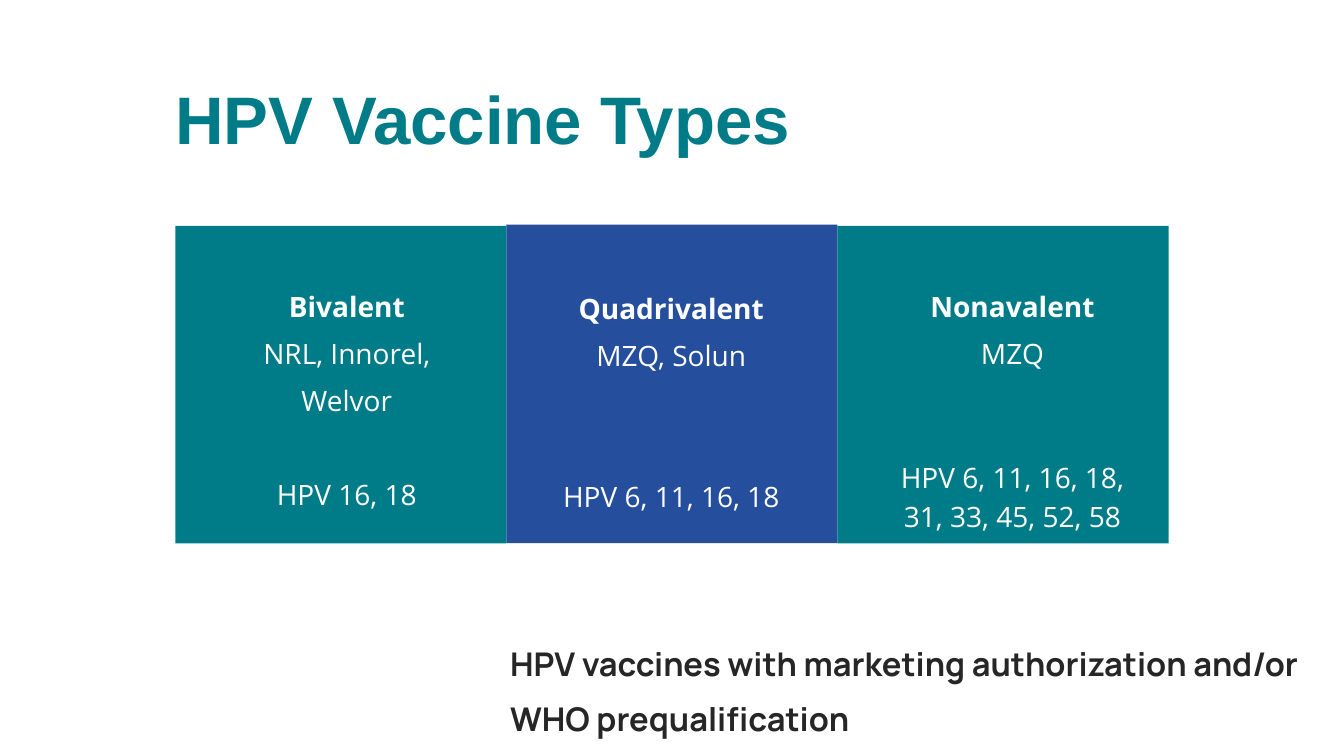
from pptx import Presentation
from pptx.dml.color import RGBColor
from pptx.enum.shapes import MSO_SHAPE
from pptx.enum.text import MSO_ANCHOR, PP_ALIGN
from pptx.util import Inches, Pt

TEAL, BLUE, WHITE, INK = "007C88", "254E9D", "FFFFFF", "262626"
LINE = 33.6


def color(hex_code):
    """Turn a hex string into a colour."""
    return RGBColor.from_string(hex_code)


def write(frame, text, font="Open Sans", size=20, fill=WHITE, bold=False,
          align=PP_ALIGN.CENTER, line=LINE, before=0):
    """Add one formatted paragraph to a text frame."""
    first = not frame.text
    paragraph = frame.paragraphs[0] if first else frame.add_paragraph()
    paragraph.alignment = align
    paragraph.line_spacing = Pt(line)
    if before:
        paragraph.space_before = Pt(before)
    run = paragraph.add_run()
    run.text = text
    run.font.name = font
    run.font.size = Pt(size)
    run.font.bold = bold
    run.font.color.rgb = color(fill)


def text_area(slide, left, top, width, height):
    """Add a wrapping text box without margins and return its frame."""
    frame = slide.shapes.add_textbox(
        Inches(left), Inches(top), Inches(width), Inches(height)).text_frame
    frame.word_wrap = True
    frame.vertical_anchor = MSO_ANCHOR.TOP
    frame.margin_left = frame.margin_right = 0
    frame.margin_top = frame.margin_bottom = 0
    return frame


def heading(slide, left, top, width, height):
    """Place the slide title."""
    write(text_area(slide, left, top, width, height), "HPV Vaccine Types",
          font="Arial", size=48, fill=TEAL, bold=True,
          align=PP_ALIGN.LEFT, line=80.64)


def vaccine_panel(slide, left, top, width, height, fill, inset, text_top, text_width,
                  valency, makers, strains, gap, strain_line=LINE):
    """Draw one coloured panel with its vaccine type, makers and strains."""
    panel = slide.shapes.add_shape(
        MSO_SHAPE.RECTANGLE, Inches(left), Inches(top), Inches(width), Inches(height))
    panel.shadow.inherit = False
    panel.fill.solid()
    panel.fill.fore_color.rgb = color(fill)
    panel.line.fill.background()
    frame = text_area(slide, left + inset, top + text_top, text_width, height - text_top)
    write(frame, valency, bold=True)
    write(frame, makers)
    write(frame, strains, line=strain_line, before=gap)


def vaccine_panels(slide, left, top, width, height):
    """Place the three vaccine types side by side."""
    panel_width = width / 3
    types = [
        dict(fill=TEAL, inset=0.73, text_top=0.5, text_width=1.94, valency="Bivalent",
             makers="NRL, Innorel, Welvor", strains="HPV 16, 18", gap=LINE),
        dict(fill=BLUE, inset=0.45, text_top=0.53, text_width=2.37, valency="Quadrivalent",
             makers="MZQ, Solun", strains="HPV 6, 11, 16, 18", gap=2 * LINE),
        dict(fill=TEAL, inset=0.46, text_top=0.5, text_width=2.55, valency="Nonavalent",
             makers="MZQ", strains="HPV 6, 11, 16, 18, 31, 33, 45, 52, 58",
             gap=LINE + 27.6, strain_line=27.6),
    ]
    for column, vaccine in enumerate(types):
        rise = 0.01 if vaccine["fill"] == BLUE else 0
        vaccine_panel(slide, left + column * panel_width, top - rise,
                      panel_width, height + rise, **vaccine)


def footer(slide, left, top, width, height):
    """Place the remark below the panels."""
    write(text_area(slide, left, top, width, height),
          "HPV vaccines with marketing authorization and/or WHO prequalification",
          font="Manrope", size=23.3, fill=INK, bold=True,
          align=PP_ALIGN.LEFT, line=39.14)


def main():
    """Build and save the slide."""
    deck = Presentation()
    deck.slide_width, deck.slide_height = Inches(13.33), Inches(7.5)
    slide = deck.slides.add_slide(deck.slide_layouts[6])
    heading(slide, 1.74, 0.45, 8.43, 1.13)
    vaccine_panels(slide, 1.74, 2.24, 9.85, 3.15)
    footer(slide, 5.06, 6.23, 8.28, 1.1)
    deck.save("out.pptx")


if __name__ == "__main__":
    main()
